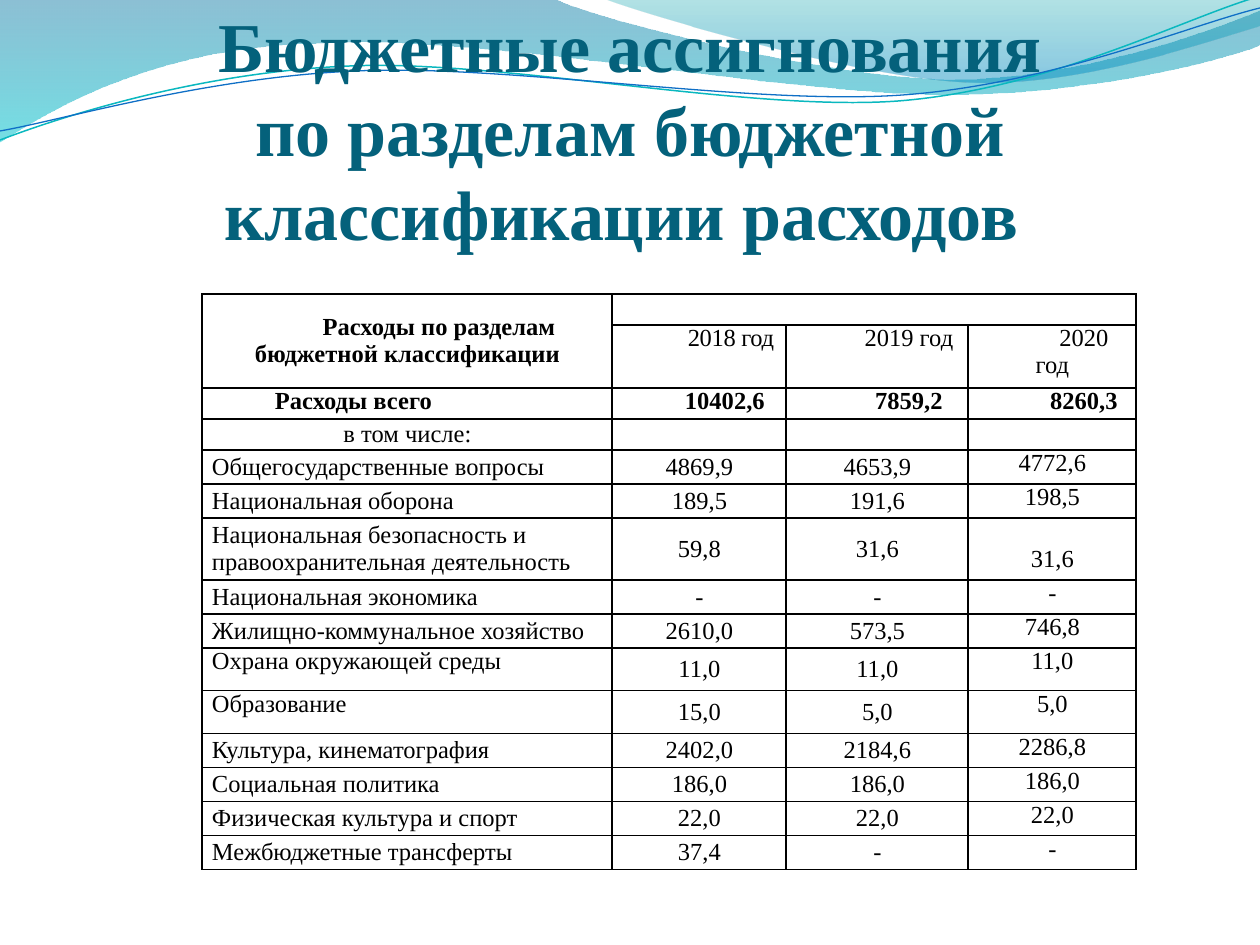
from lxml import etree
from pptx import Presentation
from pptx import util as u
from pptx.dml import color
from pptx.enum import text
from pptx.oxml import ns

SCALE = 914400 / 126
FONT = "Times New Roman"
CENTER = text.PP_ALIGN.CENTER
LEFT = text.PP_ALIGN.LEFT
TOP = text.MSO_ANCHOR.TOP
MIDDLE = text.MSO_ANCHOR.MIDDLE

BANDS = [
    ([(0, 0), (554, -1), (600, 21, 837, 79, 955, 79),
      (1074, 79, 1207, 33, 1260, 11), (1261, 45),
      (1239, 55, 1096, 96, 940, 94), (784, 94, 481, 35, 324, 43),
      (163, 45, 58, 105, -1, 142)],
     [(0, "0074A1", 45), (1, "00C6CF", 55)]),
    ([(604, -1), (641, 14, 859, 78, 969, 82),
      (1079, 87, 1211, 40, 1260, 26), (1260, 0)],
     [(0, "00A1A9", 30), (0.8, "008BBF", 45)]),
]
LINES = [
    ([(0, 140), (60, 117, 199, 72, 349, 66), (498, 59, 747, 112, 898, 101),
      (1050, 89, 1182, 19, 1257, -3)], "0AB8BF", 0.85),
    ([(0, 131), (59, 121, 207, 77, 357, 71), (508, 64, 752, 106, 903, 95),
      (1053, 84, 1187, 26, 1260, 8)], "0F6FC6", 0.75),
]

COLS = [410, 174, 182, 168]
ROWS = [31, 63, 31, 31, 34, 34, 62, 34, 34, 43, 43, 34, 34, 34, 34]
YEARS = ["2018 год", "2019 год", "2020 год"]
TOTAL = ["Расходы всего", "10402,6", "7859,2", "8260,3"]
ITEMS = [
    ("Общегосударственные вопросы", "4869,9", "4653,9", "4772,6"),
    ("Национальная оборона", "189,5", "191,6", "198,5"),
    ("Национальная безопасность и правоохранительная деятельность",
     "59,8", "31,6", "31,6"),
    ("Национальная экономика", "-", "-", "-"),
    ("Жилищно-коммунальное хозяйство", "2610,0", "573,5", "746,8"),
    ("Охрана окружающей среды", "11,0", "11,0", "11,0"),
    ("Образование", "15,0", "5,0", "5,0"),
    ("Культура, кинематография", "2402,0", "2184,6", "2286,8"),
    ("Социальная политика", "186,0", "186,0", "186,0"),
    ("Физическая культура и спорт", "22,0", "22,0", "22,0"),
    ("Межбюджетные трансферты", "37,4", "-", "-"),
]


def px(n):
    return u.Emu(round(n * SCALE))


def rgb(code):
    return color.RGBColor.from_string(code)


def add_tag(node, name, **attrs):
    return etree.SubElement(node, ns.qn(name), attrs)


def add_run(para, words, size, code="000000", bold=False):
    run = para.add_run()
    run.text = words
    font = run.font
    font.name, font.size, font.bold = FONT, u.Pt(size), bold
    font.color.rgb = rgb(code)
    return run


def add_curve(slide, box, steps, close):
    left, top = box
    dots = [(x + left, y + top) for step in steps
            for x, y in zip(step[::2], step[1::2])]
    pen = slide.shapes.build_freeform(*dots[0], scale=SCALE)
    pen.add_line_segments(dots[1:], close=close)
    shape = pen.convert_to_shape()
    shape.shadow.inherit = False
    legs = iter(list(shape.element.iter(ns.qn("a:lnTo"))))
    for step in steps[1:]:
        leg = next(legs)
        if len(step) == 6:
            bend = etree.Element(ns.qn("a:cubicBezTo"))
            leg.addprevious(bend)
            for part in (leg, next(legs), next(legs)):
                bend.append(part[0])
                part.getparent().remove(part)
    return shape


def add_waves(slide, box):
    for steps, stops in BANDS:
        band = add_curve(slide, box, steps, True)
        band.line.fill.background()
        band.fill.gradient()
        band.fill.gradient_angle = 270
        for stop, (place, code, _) in zip(band.fill.gradient_stops, stops):
            stop.position = place
            stop.color.rgb = rgb(code)
        tones = band.element.spPr.iter(ns.qn("a:srgbClr"))
        for tone, (_, _, alpha) in zip(list(tones), stops):
            add_tag(tone, "a:alpha", val=str(alpha * 1000))
    for steps, code, width in LINES:
        curve = add_curve(slide, box, steps, False)
        curve.fill.background()
        curve.line.color.rgb = rgb(code)
        curve.line.width = u.Pt(width)


def add_title(slide, box):
    title = slide.shapes.title
    title.element.getparent().append(title.element)
    title.left, title.top, title.width, title.height = map(px, box)
    frame = title.text_frame
    frame.word_wrap = True
    frame.auto_size = text.MSO_AUTO_SIZE.NONE
    frame.vertical_anchor = text.MSO_ANCHOR.BOTTOM
    frame.margin_left = frame.margin_right = frame.margin_bottom = 0
    frame.margin_top = px(6)
    para = frame.paragraphs[0]
    para.alignment = CENTER
    add_run(para, "Бюджетные ассигнования", 40, "04617B", True)
    para.add_line_break()
    add_run(para, "по разделам бюджетной классификации расходов ",
            40, "04617B", True)


def style_cell(cell):
    cell.margin_left, cell.margin_right = px(10), px(9)
    cell.margin_top = cell.margin_bottom = 0
    props = cell._tc.get_or_add_tcPr()
    for side in "LRTB":
        edge = add_tag(props, f"a:ln{side}", w=str(u.Pt(1)))
        add_tag(add_tag(edge, "a:solidFill"), "a:srgbClr", val="000000")
    cell.fill.background()
    add_tag(cell.text_frame.paragraphs[0]._p, "a:endParaRPr", sz="1400")


def fill_cell(cell, words, align=CENTER, anchor=TOP, bold=False, indent=0):
    cell.vertical_anchor = anchor
    para = cell.text_frame.paragraphs[0]
    para.alignment = align
    if indent:
        props = para._p.get_or_add_pPr()
        props.set("marL", "0")
        props.set("indent", str(px(indent)))
    return add_run(para, words, 14, bold=bold)


def add_budget(slide, box):
    left, top = box
    frame = slide.shapes.add_table(len(ROWS), len(COLS), px(left), px(top),
                                   px(sum(COLS)), px(sum(ROWS)))
    grid = frame.table
    grid.first_row = grid.horz_banding = False
    for col, width in zip(grid.columns, COLS):
        col.width = px(width)
    for row, height in zip(grid.rows, ROWS):
        row.height = px(height)
    for cell in grid.iter_cells():
        style_cell(cell)
    grid.cell(0, 0).merge(grid.cell(1, 0))
    grid.cell(0, 1).merge(grid.cell(0, 3))
    fill_cell(grid.cell(0, 0), "Расходы по разделам бюджетной классификации",
              anchor=MIDDLE, bold=True, indent=63)
    for c, year in enumerate(YEARS, 1):
        run = fill_cell(grid.cell(1, c), year, indent=63)
        if c == 1:
            run.font._element.set("spc", "-20")
    for c, words in enumerate(TOTAL):
        fill_cell(grid.cell(2, c), words, LEFT if c < 2 else CENTER,
                  bold=True, indent=63)
    fill_cell(grid.cell(3, 0), "в том числе:", anchor=MIDDLE)
    for r, item in enumerate(ITEMS, 4):
        for c, words in enumerate(item):
            high = c == 3 or (c == 0 and ROWS[r] == 43)
            fill_cell(grid.cell(r, c), words, CENTER if c else LEFT,
                      TOP if high else MIDDLE)
    grid.cell(6, 3).margin_top = px(28)


def main():
    deck = Presentation()
    deck.slide_width, deck.slide_height = px(1260), px(945)
    slide = deck.slides.add_slide(deck.slide_layouts[5])
    add_waves(slide, (0, 0))
    add_title(slide, (63, 97, 1134, 158))
    add_budget(slide, (202, 294))
    deck.save("out.pptx")


if __name__ == "__main__":
    main()
